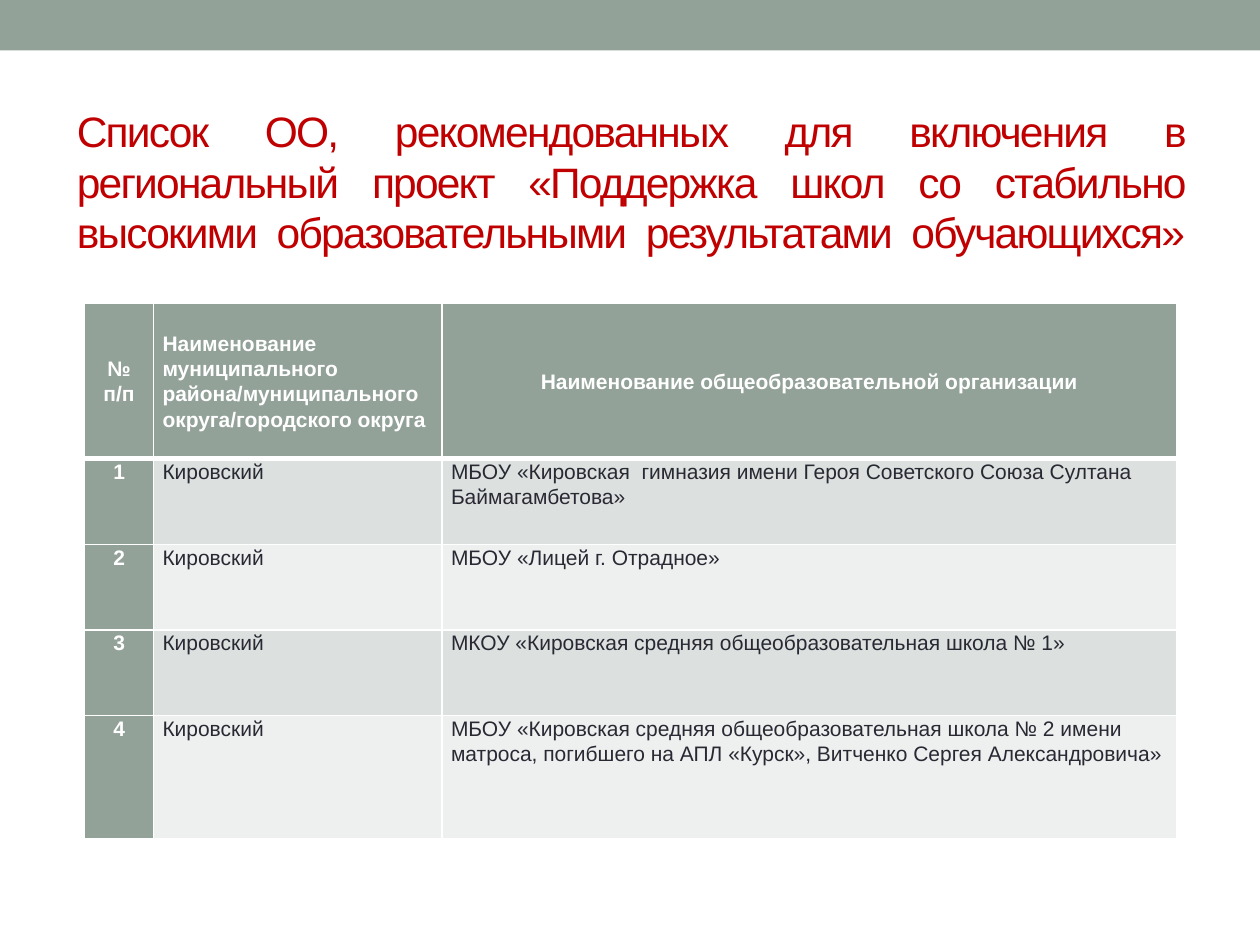
from pptx import Presentation
from pptx.dml.color import RGBColor
from pptx.enum.shapes import MSO_SHAPE as Shape
from pptx.enum.text import MSO_ANCHOR as Anchor, MSO_AUTO_SIZE as Fit, PP_ALIGN as Align
from pptx.oxml.ns import qn
from pptx.util import Inches, Pt
from lxml.etree import SubElement as Sub

GREEN = RGBColor(0x93, 0xA2, 0x99)
RED = RGBColor(0xC0, 0x00, 0x00)
WHITE = RGBColor(0xFF, 0xFF, 0xFF)
INK = RGBColor(0x29, 0x29, 0x34)
BANDS = [RGBColor(0xDC, 0xE0, 0xDE), RGBColor(0xEE, 0xF0, 0xEF)]

TITLE = ("Список ОО, рекомендованных для включения в региональный проект "
         "«Поддержка школ со стабильно высокими образовательными "
         "результатами обучающихся»")
HEAD = ["№ п/п",
        "Наименование муниципального района/муниципального округа/городского округа",
        "Наименование общеобразовательной организации"]
AREA = "Кировский"
SCHOOLS = [
    "МБОУ «Кировская  гимназия имени Героя Советского Союза Султана Баймагамбетова»",
    "МБОУ «Лицей г. Отрадное»",
    "МКОУ «Кировская средняя общеобразовательная школа № 1»",
    "МБОУ «Кировская средняя общеобразовательная школа № 2 имени матроса, "
    "погибшего на АПЛ «Курск», Витченко Сергея Александровича»",
]
COLS = [0.55, 2.29, 5.83]
ROWS = [1.23, 0.68, 0.68, 0.68, 0.98]


def style(para, size, color, bold, align):
    font = para.font
    font.name, font.size, font.bold = "Arial", Pt(size), bold
    font.color.rgb = color
    para.alignment = align


def add_bar(slide):
    bar = slide.shapes.add_shape(Shape.RECTANGLE, 0, 0, Inches(10), Inches(0.4))
    bar.shadow.inherit = False
    bar.fill.solid()
    bar.fill.fore_color.rgb = GREEN
    bar.line.fill.background()


def set_title(slide):
    title = slide.shapes.title
    title.left, title.top = Inches(0.51), Inches(0.44)
    title.width, title.height = Inches(9), Inches(1.51)
    frame = title.text_frame
    frame.word_wrap, frame.auto_size = True, Fit.NONE
    frame.vertical_anchor = Anchor.TOP
    frame.margin_top = Inches(0.39)
    # The closing line break justifies the last line too
    frame.text = TITLE + "\v"
    para = frame.paragraphs[0]
    style(para, 24.3, RED, False, Align.JUSTIFY)
    para.line_spacing = Pt(29.1)
    para._p.pPr.find(qn("a:defRPr")).set("spc", "-100")


def add_edge(cell, side, width):
    props = cell._tc.get_or_add_tcPr()
    line = Sub(props, qn(f"a:ln{side}"), w=str(Pt(width)))
    fill = Sub(line, qn("a:solidFill"))
    Sub(fill, qn("a:srgbClr"), val=str(WHITE))


def set_cell(cell, text, row, col):
    head = row == 0
    label = head or col == 0
    # Borders come before the fill in the cell properties
    for side in "LRTB":
        thick = (head and side == "B") or (row == 1 and side == "T")
        add_edge(cell, side, 3 if thick else 1)
    cell.fill.solid()
    cell.fill.fore_color.rgb = GREEN if label else BANDS[(row - 1) % 2]
    cell.margin_left = cell.margin_right = Inches(0.07)
    cell.margin_top = cell.margin_bottom = 0
    cell.vertical_anchor = Anchor.MIDDLE if head else Anchor.TOP
    cell.text = text
    para = cell.text_frame.paragraphs[0]
    center = col == 0 or (head and col == 2)
    style(para, 12, WHITE if label else INK, label,
          Align.CENTER if center else Align.LEFT)
    para.line_spacing = 1.07


def add_list(slide):
    table = slide.shapes.add_table(
        len(ROWS), len(COLS), Inches(0.67), Inches(2.41),
        Inches(sum(COLS)), Inches(sum(ROWS))).table
    for col, width in zip(table.columns, COLS):
        col.width = Inches(width)
    for row, height in zip(table.rows, ROWS):
        row.height = Inches(height)
    data = [HEAD] + [[str(n), AREA, name] for n, name in enumerate(SCHOOLS, 1)]
    for r, row in enumerate(data):
        for c, text in enumerate(row):
            set_cell(table.cell(r, c), text, r, c)


def main():
    deck = Presentation()
    deck.slide_width, deck.slide_height = Inches(10), Inches(7.5)
    slide = deck.slides.add_slide(deck.slide_layouts[5])
    add_bar(slide)
    set_title(slide)
    add_list(slide)
    deck.save("out.pptx")


if __name__ == "__main__":
    main()
